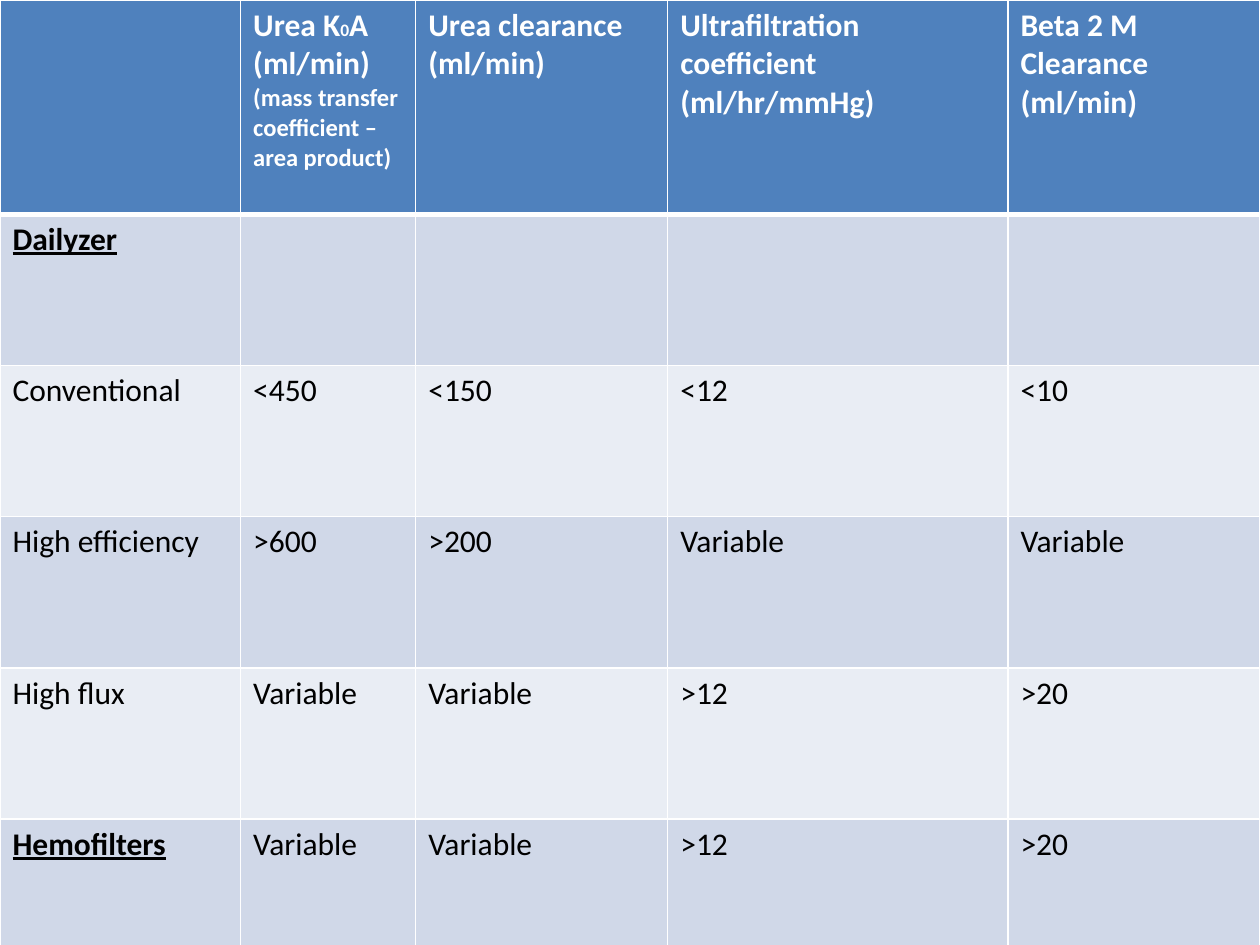
from dataclasses import dataclass

from lxml import etree
from pptx import Presentation
from pptx.dml.color import RGBColor
from pptx.oxml.ns import qn
from pptx.util import Inches, Pt

BLANK_LAYOUT = 6


@dataclass(frozen=True)
class Theme:
    font: str = "Calibri"
    header_fill: str = "4F81BD"
    band_fills: tuple[str, str] = ("D0D8E8", "E9EDF4")
    light: str = "FFFFFF"
    dark: str = "000000"
    body_size: int = 18
    note_size: int = 14
    subscript_size: int = 10
    border: float = 1
    header_border: float = 3


@dataclass(frozen=True)
class TextRun:
    text: str
    size: int = Theme.body_size
    bold: bool = False
    underline: bool = False
    color: str = Theme.dark


THEME = Theme()
Paragraphs = list[list[TextRun]]


def header(text: str, size: int = THEME.body_size) -> TextRun:
    return TextRun(text, size, bold=True, color=THEME.light)


def group(text: str) -> TextRun:
    return TextRun(text, bold=True, underline=True)


COLUMN_WIDTHS = (1.91, 1.39, 2, 2.7, 2)
HEADER_HEIGHT = 1.7
ROW_HEIGHT = 1.2
UNIT = [header("(ml/min)")]
HEADERS: list[Paragraphs] = [
    [],
    [
        [header("Urea K"), header("0", THEME.subscript_size), header("A")],
        UNIT,
        [header("(mass transfer coefficient – area product)", THEME.note_size)],
    ],
    [[header("Urea clearance")], UNIT],
    [[header("Ultrafiltration coefficient")], [header("(ml/hr/mmHg)")]],
    [[header("Beta 2 M Clearance")], UNIT],
]
BODY = [
    (group("Dailyzer"), ()),
    (TextRun("Conventional"), ("<450", "<150", "<12", "<10")),
    (TextRun("High efficiency"), (">600", ">200", "Variable", "Variable")),
    (TextRun("High flux"), ("Variable", "Variable", ">12", ">20")),
    (group("Hemofilters"), ("Variable", "Variable", ">12", ">20")),
]


def set_border(cell, side: str, width: float) -> None:
    line = etree.Element(qn(f"a:ln{side}"), w=str(Pt(width)))
    fill = etree.SubElement(line, qn("a:solidFill"))
    etree.SubElement(fill, qn("a:srgbClr"), val=THEME.light)
    cell._tc.get_or_add_tcPr().append(line)


def style_cell(cell, fill: str, top: float, bottom: float) -> None:
    """Borders come before the fill, as the schema orders them."""
    for side, width in zip("LRTB", (THEME.border, THEME.border, top, bottom)):
        set_border(cell, side, width)
    cell.fill.solid()
    cell.fill.fore_color.rgb = RGBColor.from_string(fill)


def write_cell(cell, paragraphs: Paragraphs) -> None:
    frame = cell.text_frame
    for index, text_runs in enumerate(paragraphs):
        paragraph = frame.add_paragraph() if index else frame.paragraphs[0]
        for text_run in text_runs:
            run = paragraph.add_run()
            run.text = text_run.text
            font = run.font
            font.name = THEME.font
            font.size = Pt(text_run.size)
            font.bold = text_run.bold
            font.underline = text_run.underline
            font.color.rgb = RGBColor.from_string(text_run.color)


def add_comparison_table(slide) -> None:
    row_count = len(BODY) + 1
    table = slide.shapes.add_table(
        row_count, len(COLUMN_WIDTHS), Inches(0), Inches(0),
        Inches(sum(COLUMN_WIDTHS)), Inches(HEADER_HEIGHT + ROW_HEIGHT * len(BODY)),
    ).table
    for column, width in zip(table.columns, COLUMN_WIDTHS):
        column.width = Inches(width)
    for index, row in enumerate(table.rows):
        row.height = Inches(ROW_HEIGHT if index else HEADER_HEIGHT)
        fill = THEME.band_fills[(index - 1) % 2] if index else THEME.header_fill
        top = THEME.header_border if index == 1 else THEME.border
        bottom = THEME.border if index else THEME.header_border
        for cell in row.cells:
            style_cell(cell, fill, top, bottom)

    for column, paragraphs in enumerate(HEADERS):
        write_cell(table.cell(0, column), paragraphs)
    for row_index, (label, values) in enumerate(BODY, start=1):
        entries = [label, *map(TextRun, values)]
        for column, entry in enumerate(entries):
            write_cell(table.cell(row_index, column), [[entry]])


def main() -> None:
    presentation = Presentation()
    presentation.slide_width = Inches(10)
    presentation.slide_height = Inches(7.5)
    slide = presentation.slides.add_slide(presentation.slide_layouts[BLANK_LAYOUT])
    add_comparison_table(slide)
    presentation.save("out.pptx")


if __name__ == "__main__":
    main()
